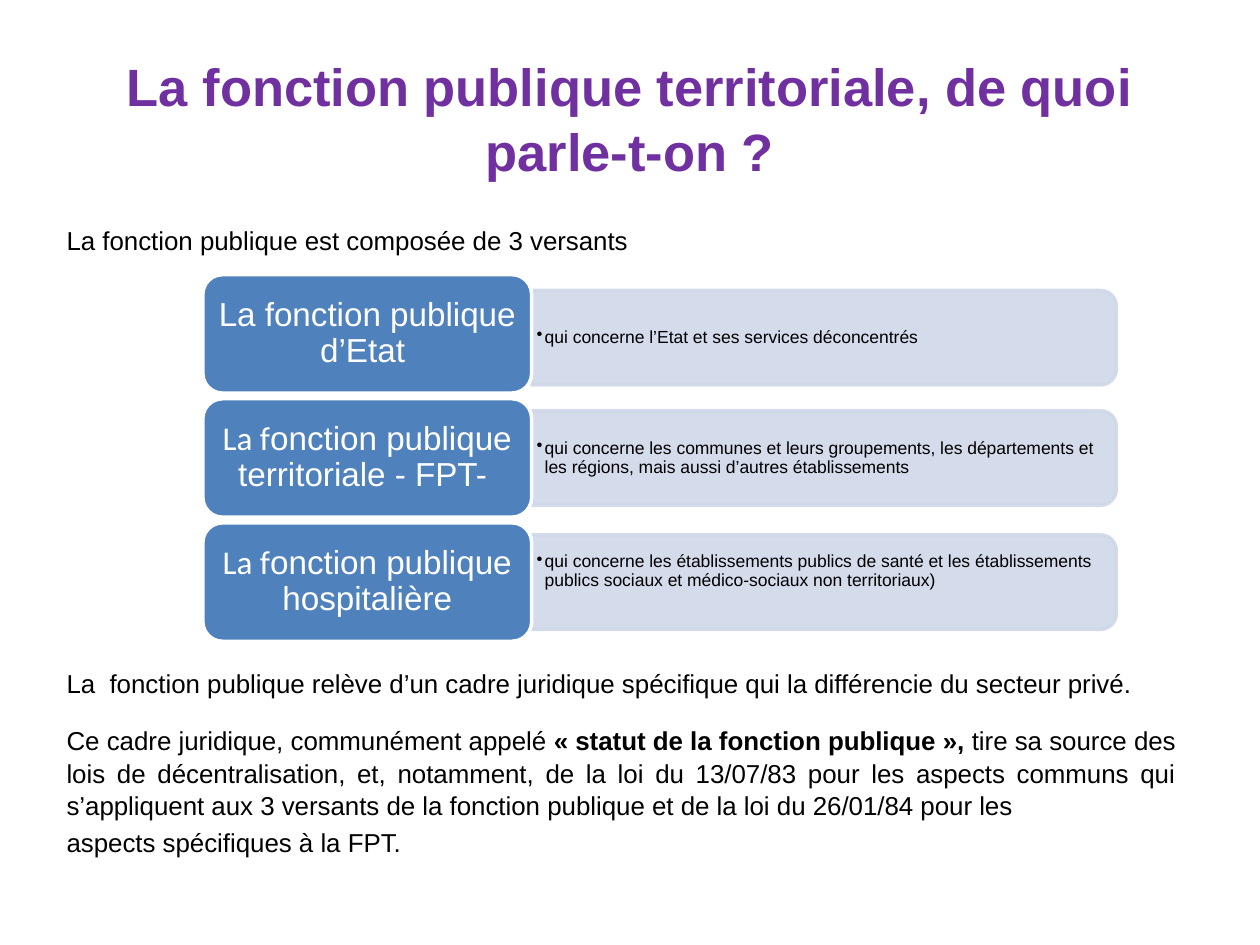
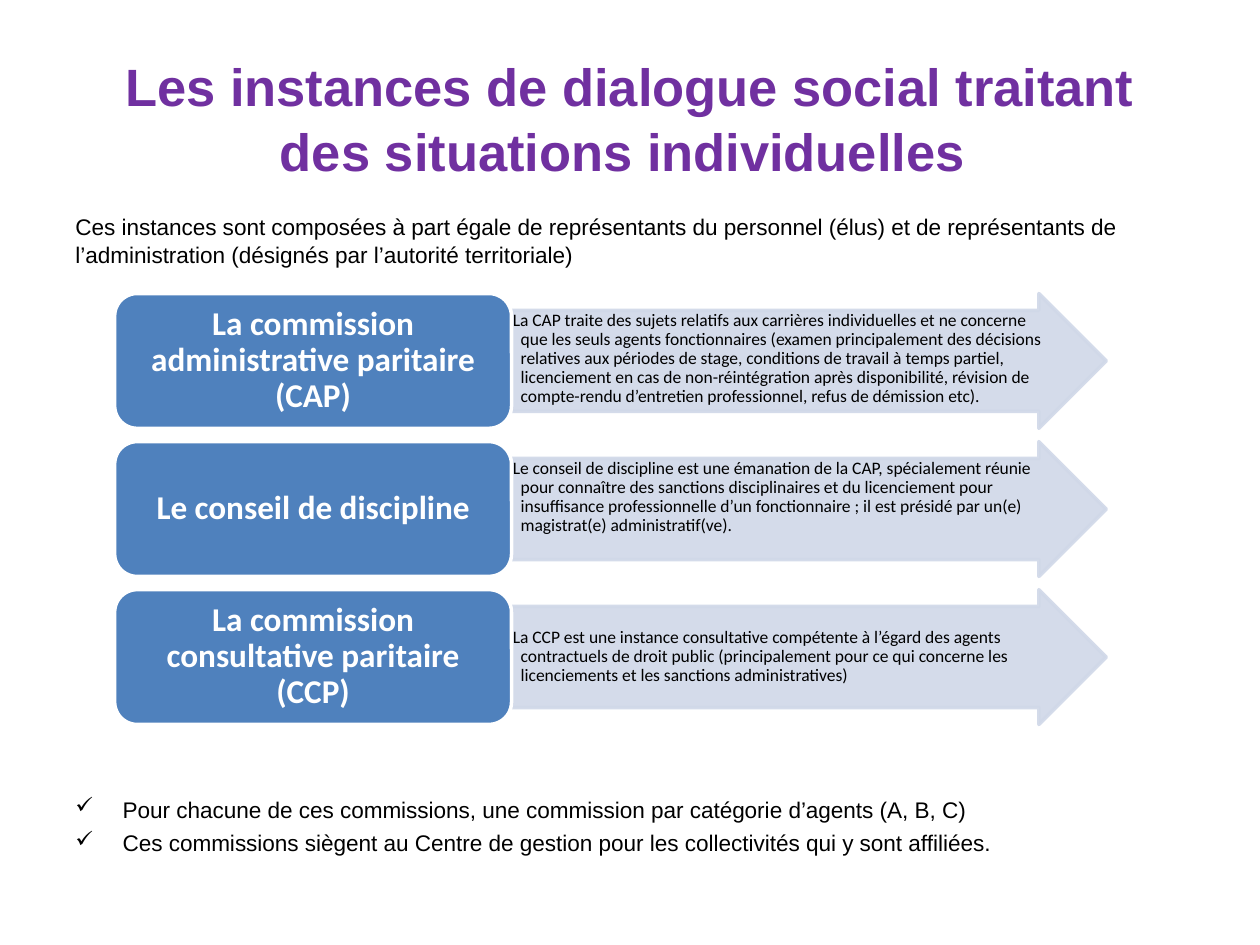
import pptx
import pptx.util
import pptx.dml.color
import pptx.enum.shapes
import pptx.enum.text
import pptx.oxml
import pptx.oxml.ns
from lxml import etree

COLORS = {
    "title": "7030A0",
    "text": "000000",
    "label": "4F81BD",
    "panel": "D0D8E8",
    "white": "FFFFFF",
}
SLIDE_WIDTH, SLIDE_HEIGHT = pptx.util.Inches(10), pptx.util.Inches(7.5)
COLUMNS, ROWS = 100, 75
TITLE_LAYOUT = 5

Shapes = pptx.enum.shapes.MSO_SHAPE
Align = pptx.enum.text.PP_ALIGN
Anchor = pptx.enum.text.MSO_ANCHOR

BRANCHES = [
    ([("La fonction publique d’Etat ", "Arial")],
     "qui concerne l’Etat et ses services déconcentrés", 0.3, 0.2),
    ([("La f", "Calibri"), ("onction publique territoriale - FPT- ", "Arial")],
     "qui concerne les communes et leurs groupements, les départements et "
     "les régions, mais aussi d’autres établissements", 0, 0.2),
    ([("La f", "Calibri"), ("onction publique hospitalière", "Arial")],
     "qui concerne les établissements publics de santé et les établissements "
     "publics sociaux et médico-sociaux non territoriaux)", 0, 1.9),
]
COMMITTEES = [
    ("La commission administrative paritaire (CAP)",
     "La CAP traite des sujets relatifs aux carrières individuelles et ne concerne "
     "que les seuls agents fonctionnaires (examen principalement des décisions "
     "relatives aux périodes de stage, conditions de travail à temps partiel, "
     "licenciement en cas de non-réintégration après disponibilité, révision de "
     "compte-rendu d’entretien professionnel, refus de démission etc).", Anchor.TOP),
    ("Le conseil de discipline",
     "Le conseil de discipline est une émanation de la CAP, spécialement réunie "
     "pour connaître des sanctions disciplinaires et du licenciement pour "
     "insuffisance professionnelle d’un fonctionnaire ; il est présidé par un(e) "
     "magistrat(e) administratif(ve).", Anchor.TOP),
    ("La commission consultative paritaire (CCP)",
     "La CCP est une instance consultative compétente à l’égard des agents "
     "contractuels de droit public (principalement pour ce qui concerne les "
     "licenciements et les sanctions administratives)", Anchor.MIDDLE),
]


def across(columns):
    return round(SLIDE_WIDTH * columns / COLUMNS)


def down(rows):
    return round(SLIDE_HEIGHT * rows / ROWS)


def area(left, top, width, height):
    return across(left), down(top), across(width), down(height)


def rgb(name):
    return pptx.dml.color.RGBColor.from_string(COLORS[name])


def set_frame(box, anchor, sides=1, top=0.5, bottom=0.5):
    frame = box.text_frame
    frame.word_wrap = True
    frame.vertical_anchor = anchor
    frame.margin_left = frame.margin_right = across(sides)
    frame.margin_top, frame.margin_bottom = down(top), down(bottom)
    return frame


def set_indent(para, columns, bullet=None):
    properties = para._p.get_or_add_pPr()
    properties.set("marL", str(across(columns)))
    properties.set("indent", str(-across(columns)))
    if bullet:
        mark = etree.SubElement(properties, pptx.oxml.ns.qn("a:buChar"))
        mark.set("char", bullet)


def write(para, spans, size, color="text", font="Arial", bold=False,
          align=Align.LEFT, spacing=1.04, before=0):
    para.alignment = align
    para.line_spacing = spacing
    para.space_before = pptx.util.Pt(before)
    para.font.size = pptx.util.Pt(size)
    para.font.color.rgb = rgb(color)
    para.font.bold = bold
    if font:
        para.font.name = font
    for text, span_font, span_bold in spans:
        span = para.add_run()
        span.text = text
        if span_font:
            span.font.name = span_font
        if span_bold:
            span.font.bold = True


def plain(text):
    return [(text, None, False)]


def add_page(deck, title):
    page = deck.slides.add_slide(deck.slide_layouts[TITLE_LAYOUT])
    box = page.shapes.title
    box.left, box.top, box.width, box.height = area(5, 3, 90, 12.5)
    frame = set_frame(box, Anchor.MIDDLE)
    write(frame.paragraphs[0], plain(title), 30, "title", bold=True, align=Align.CENTER)
    return page


def add_body(page, place, paragraphs, size, align=Align.LEFT, bullet=None):
    frame = set_frame(page.shapes.add_textbox(*area(*place)), Anchor.TOP)
    for number, (spans, before) in enumerate(paragraphs):
        para = frame.add_paragraph() if number else frame.paragraphs[0]
        if bullet:
            set_indent(para, 3.75, bullet)
        write(para, spans, size, align=align, before=before)


def add_filled(page, kind, place, fill, line, opacity=100):
    shape = page.shapes.add_shape(kind, *area(*place))
    shape.shadow.inherit = False
    shape.fill.solid()
    shape.fill.fore_color.rgb = rgb(fill)
    shape.line.color.rgb = rgb(line)
    shape.line.width = pptx.util.Pt(2)
    if opacity < 100:
        for tint in shape._element.spPr.iter(pptx.oxml.ns.qn("a:srgbClr")):
            alpha = etree.SubElement(tint, pptx.oxml.ns.qn("a:alpha"))
            alpha.set("val", str(opacity * 1000))
    return shape


def add_label(page, place, spans, font=None, bold=False):
    label = add_filled(page, Shapes.ROUNDED_RECTANGLE, place, "label", "white")
    frame = set_frame(label, Anchor.MIDDLE, 0.6, 0.4, 0.4)
    write(frame.paragraphs[0], spans, 19, "white", font, bold, Align.CENTER, 0.9)


def add_bar(page, left, middle, width, height, text, bottom):
    upright = (left + (width - height) / 2, middle - width / 2, height, width)
    bar = add_filled(page, Shapes.ROUND_2_SAME_RECTANGLE, upright, "panel", "panel", 90)
    bar.rotation = 90
    box = page.shapes.add_textbox(*area(left, middle - 3.4, width - 0.4, 6.8))
    para = set_frame(box, Anchor.MIDDLE, 0.4, 0.2, bottom).paragraphs[0]
    set_indent(para, 0.63, "•")
    write(para, plain(text), 10, spacing=0.9)


def add_arrow(page, place, text, anchor):
    arrow = add_filled(page, Shapes.RIGHT_ARROW, place, "panel", "panel", 90)
    arrow.adjustments[0], arrow.adjustments[1] = 0.75, 0.5
    para = set_frame(arrow, anchor, 0.1, 0.1, 0.1).paragraphs[0]
    set_indent(para, 0.63)
    write(para, plain(text), 10, font="Calibri", spacing=0.9)


def build_branches(deck):
    page = add_page(deck, "La fonction publique territoriale, de quoi parle-t-on ?")
    add_body(page, (4.3, 17.2, 90, 4),
             [(plain("La fonction publique est composée de 3 versants"), 0)], 14.8)
    left, top, width, height, pitch = 16.1, 21.8, 26.1, 9.4, 9.85
    for row, (name, text, shift, bottom) in enumerate(BRANCHES):
        row_top = top + row * pitch
        add_bar(page, left + width, row_top + height / 2 + shift, 46.4, 7.5, text, bottom)
        spans = [(part, font, False) for part, font in name]
        add_label(page, (left, row_top, width, height), spans)
    statute = [
        ("Ce cadre juridique, communément appelé ", None, False),
        ("« statut de la fonction publique », ", None, True),
        ("tire sa source des lois de décentralisation, et, notamment, de la loi du "
         "13/07/83 pour les aspects communs qui s’appliquent aux 3 versants de la "
         "fonction publique et de la loi du 26/01/84 pour les", None, False),
    ]
    add_body(page, (4.3, 52.4, 90, 16.6), [
        (plain("La  fonction publique relève d’un cadre juridique spécifique qui la "
               "différencie du secteur privé."), 0),
        (statute, 14.3),
        (plain("aspects spécifiques à la FPT."), 3),
    ], 14.8, Align.JUSTIFY)


def build_committees(deck):
    page = add_page(deck, "Les instances de dialogue social traitant des situations "
                          "individuelles ")
    add_body(page, (5, 16.3, 90, 6), [
        (plain("Ces instances sont composées à part égale de représentants du personnel "
               "(élus) et de représentants de l’administration (désignés par l’autorité "
               "territoriale)"), 0)], 12.9)
    left, top, width, height, pitch = 9.1, 23.3, 31.5, 10.7, 11.75
    for row, (name, text, anchor) in enumerate(COMMITTEES):
        row_top = top + row * pitch
        add_arrow(page, (left + width, row_top, 47.2, height), text, anchor)
        add_label(page, (left, row_top, width, height), plain(name), "Calibri", True)
    add_body(page, (5, 62.6, 90, 6), [
        (plain("Pour chacune de ces commissions, une commission par catégorie d’agents "
               "(A, B, C)"), 0),
        (plain("Ces commissions siègent au Centre de gestion pour les collectivités qui "
               "y sont affiliées."), 3),
    ], 12.9, Align.JUSTIFY, "✓")


def main():
    deck = pptx.Presentation()
    deck.slide_width, deck.slide_height = SLIDE_WIDTH, SLIDE_HEIGHT
    build_branches(deck)
    build_committees(deck)
    deck.save("out.pptx")


if __name__ == "__main__":
    main()
